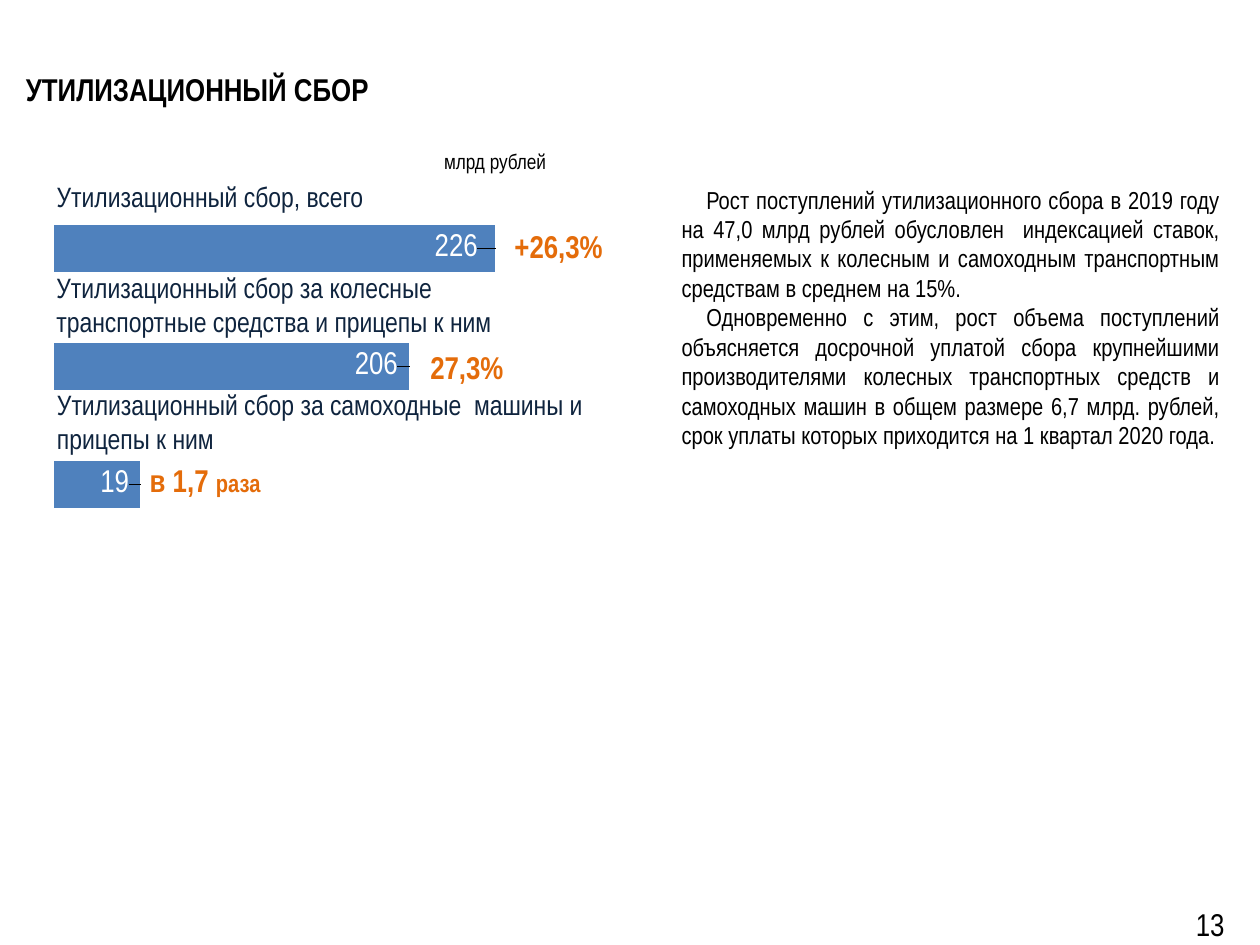
from lxml import etree
from pptx import Presentation
from pptx.chart.data import CategoryChartData
from pptx.dml.color import RGBColor
from pptx.enum.chart import XL_CHART_TYPE as ChartType, XL_LABEL_POSITION as LabelPos
from pptx.enum.text import MSO_ANCHOR as Anchor, PP_ALIGN as Align
from pptx.oxml import parse_xml
from pptx.oxml.ns import nsdecls, qn
from pptx.util import Pt

FONT = "Arial Narrow"
BLACK, NAVY, ORANGE, BLUE, WHITE = "000000", "0F243E", "E46C0A", "4F81BD", "FFFFFF"


def color(hex_string):
    return RGBColor.from_string(hex_string)


def style(font, size, hex_string, bold=False, name=FONT):
    font.name, font.size, font.bold = name, Pt(size), bold
    font.color.rgb = color(hex_string)


def add_text(slide, box, paragraphs, size, hex_string=BLACK, bold=False,
             align=Align.LEFT, anchor=Anchor.TOP):
    frame = slide.shapes.add_textbox(*map(Pt, box)).text_frame
    frame.word_wrap = True
    frame.vertical_anchor = anchor
    for index, text in enumerate(paragraphs):
        paragraph = frame.paragraphs[0] if index == 0 else frame.add_paragraph()
        paragraph.text = text
        paragraph.alignment = align
        style(paragraph.font, size, hex_string, bold)
    return frame


def set_layout(parent, position, settings):
    for old in parent.findall(qn("c:layout")):
        parent.remove(old)
    layout = parse_xml(f"<c:layout {nsdecls('c')}/>")
    manual = etree.SubElement(layout, qn("c:manualLayout"))
    for tag, value in settings.items():
        etree.SubElement(manual, qn(f"c:{tag}")).set("val", str(value))
    parent.insert(position, layout)


def add_fee_chart(slide, box, values, captions, label_shifts):
    data = CategoryChartData(number_format="#,##0")
    data.categories = [str(n + 1) for n in range(len(values))]
    data.add_series("Series 1", values)
    chart = slide.shapes.add_chart(ChartType.BAR_CLUSTERED, *map(Pt, box), data).chart
    chart.has_legend = chart.has_title = False
    style(chart.font, 18, BLACK, name="Calibri")
    set_layout(chart._chartSpace.chart.plotArea, 0, {
        "layoutTarget": "inner", "xMode": "edge", "yMode": "edge",
        "x": 0.08, "y": 0.09, "w": 0.83, "h": 0.83})

    axis = chart.value_axis
    axis.minimum_scale, axis.maximum_scale = 0, 300
    axis.has_major_gridlines = False
    axis.visible = chart.category_axis.visible = False

    plot = chart.plots[0]
    plot.gap_width = 150
    plot.vary_by_categories = False
    bars = plot.series[0]
    bars.format.fill.solid()
    bars.format.fill.fore_color.rgb = color(BLUE)

    # Value labels
    labels = bars.data_labels
    labels.show_value = True
    labels.number_format, labels.number_format_is_linked = "#,##0", False
    labels.position = LabelPos.INSIDE_END
    style(labels.font, 18, WHITE, bold=True)
    for index, (caption, shift) in enumerate(zip(captions, label_shifts)):
        label = bars.points[index].data_label
        run = label.text_frame.paragraphs[0].add_run()
        run.text = caption
        style(run.font, 18, WHITE)
        label.position = LabelPos.INSIDE_END
        set_layout(label._dLbl, 1, {"x": shift, "y": 0})


def main():
    prs = Presentation()
    prs.slide_width, prs.slide_height = Pt(720), Pt(540)
    slide = prs.slides.add_slide(prs.slide_layouts[6])

    # Bars, from bottom to top
    add_fee_chart(slide, (2.4, 86.8, 356, 243), (50, 206, 256), ("19", "206", "226"),
                  (-0.01, -0.01, -0.02))

    # Heading and unit
    add_text(slide, (7.7, 6, 696, 90), ["УТИЛИЗАЦИОННЫЙ СБОР"], 18, bold=True,
             anchor=Anchor.MIDDLE)
    add_text(slide, (246.7, 81.5, 100, 21.5), ["млрд рублей"], 12, anchor=Anchor.MIDDLE)

    # Bar captions
    for box, caption in [
        ((25.3, 99.1, 212, 26.5), "Утилизационный сбор, всего"),
        ((25.2, 151.2, 270.7, 46), "Утилизационный сбор за колесные  транспортные средства и прицепы к ним"),
        ((25.5, 218, 357, 46), "Утилизационный сбор за самоходные  машины и прицепы к ним"),
    ]:
        add_text(slide, box, [caption], 16, NAVY)

    # Growth figures
    for box, growth in [
        ((281.5, 126, 70, 29), "+26,3%"),
        ((225.8, 195.2, 69, 29), "27,3%"),
        ((58, 260, 98, 29), "в 1,7 "),
    ]:
        frame = add_text(slide, box, [growth], 18, ORANGE, True, Align.RIGHT)
    unit = frame.paragraphs[0].add_run()
    unit.text = "раза"
    unit.font.size = Pt(14)

    # Commentary
    commentary = add_text(slide, (382.4, 102, 321.8, 177), [
        "Рост поступлений утилизационного сбора в 2019 году на 47,0 млрд рублей "
        "обусловлен  индексацией ставок, применяемых к колесным и самоходным "
        "транспортным средствам в среднем на 15%.",
        "Одновременно с этим, рост объема поступлений объясняется досрочной уплатой "
        "сбора крупнейшими производителями колесных транспортных средств и самоходных "
        "машин в общем размере 6,7 млрд. рублей, срок уплаты которых приходится на "
        "1 квартал 2020 года.",
    ], 14, align=Align.JUSTIFY)
    for paragraph in commentary.paragraphs:
        properties = paragraph._p.get_or_add_pPr()
        properties.set("marL", "0")
        properties.set("indent", str(Pt(14.2)))

    # Page number
    page = add_text(slide, (663, 496, 57, 55), ["13"], 18, align=Align.CENTER,
                    anchor=Anchor.MIDDLE)
    page.margin_left = page.margin_right = Pt(8)
    page.margin_top = page.margin_bottom = Pt(4)
    page.paragraphs[0].line_spacing = Pt(30.1)

    prs.save("out.pptx")


if __name__ == "__main__":
    main()
